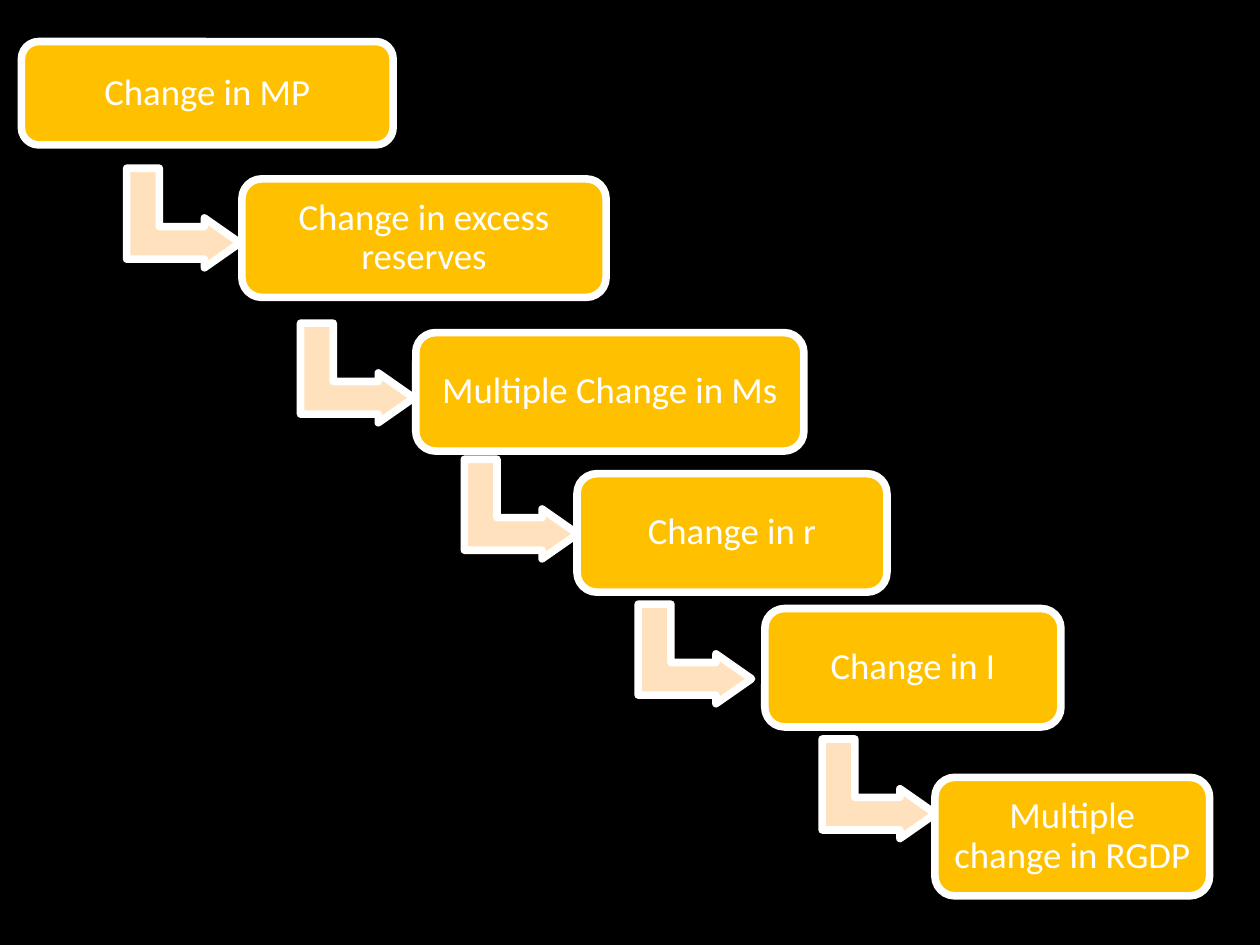
from pptx import Presentation
from pptx.dml.color import RGBColor
from pptx.enum.shapes import MSO_SHAPE
from pptx.enum.text import MSO_ANCHOR, PP_ALIGN
from pptx.util import Inches, Pt

COLORS = {"background": "000000", "step": "FFC000", "arrow": "FFE2BD", "white": "FFFFFF"}
ARROW_SIZE = (0.79, 0.9)
STEPS = [
    ("Change in MP", (0.17, 0.33, 2.95, 0.82), (0.89, 0.95)),
    ("Change in excess reserves", (1.92, 1.42, 2.89, 0.94), (0.52, 1.09)),
    ("Multiple Change in Ms", (3.3, 2.64, 3.08, 0.94), (0.44, 0.95)),
    ("Change in r", (4.58, 3.76, 2.46, 0.94), (0.54, 0.98)),
    ("Change in I", (6.07, 4.83, 2.35, 0.94), (0.51, 0.98)),
    ("Multiple change in RGDP", (7.42, 6.17, 2.18, 0.94), None),
]


def color(name):
    """Return the named colour."""
    return RGBColor.from_string(COLORS[name])


def add_outlined_shape(page, preset, box, fill, adjustments):
    """Add a flat preset shape with a thick white outline."""
    shape = page.shapes.add_shape(preset, *map(Inches, box))
    shape.shadow.inherit = False
    shape.fill.solid()
    shape.fill.fore_color.rgb = color(fill)
    shape.line.color.rgb = color("white")
    shape.line.width = Pt(4.33)
    for index, value in enumerate(adjustments):
        shape.adjustments[index] = value
    return shape


def add_step(page, box, text):
    """Add a rounded box with a centred step label."""
    step = add_outlined_shape(page, MSO_SHAPE.ROUNDED_RECTANGLE, box, "step", [0.167])
    frame = step.text_frame
    frame.word_wrap = True
    frame.vertical_anchor = MSO_ANCHOR.MIDDLE
    frame.margin_left = frame.margin_right = Inches(0.09)
    frame.margin_top = frame.margin_bottom = Inches(0.09)
    para = frame.paragraphs[0]
    para.text = text
    para.alignment = PP_ALIGN.CENTER
    para.line_spacing = 0.9
    para.font.name = "Calibri"
    para.font.size = Pt(21)
    para.font.color.rgb = color("white")


def add_arrow(page, step_box, offset):
    """Add the bent arrow leading from a step down to the next one."""
    left, top = step_box[0] + offset[0], step_box[1] + offset[1]
    arrow = add_outlined_shape(page, MSO_SHAPE.BENT_UP_ARROW, (left, top, *ARROW_SIZE),
                               "arrow", [0.328, 0.25, 0.358])
    arrow.rotation = 90


def add_staircase(page, steps):
    """Add the descending steps, each with its arrow behind it."""
    for text, box, arrow_offset in steps:
        if arrow_offset:
            add_arrow(page, box, arrow_offset)
        add_step(page, box, text)


def main():
    """Build and save the deck."""
    deck = Presentation()
    deck.slide_width, deck.slide_height = Inches(10), Inches(7.5)
    page = deck.slides.add_slide(deck.slide_layouts[6])
    page.background.fill.solid()
    page.background.fill.fore_color.rgb = color("background")
    add_staircase(page, STEPS)
    deck.save("out.pptx")


if __name__ == "__main__":
    main()
